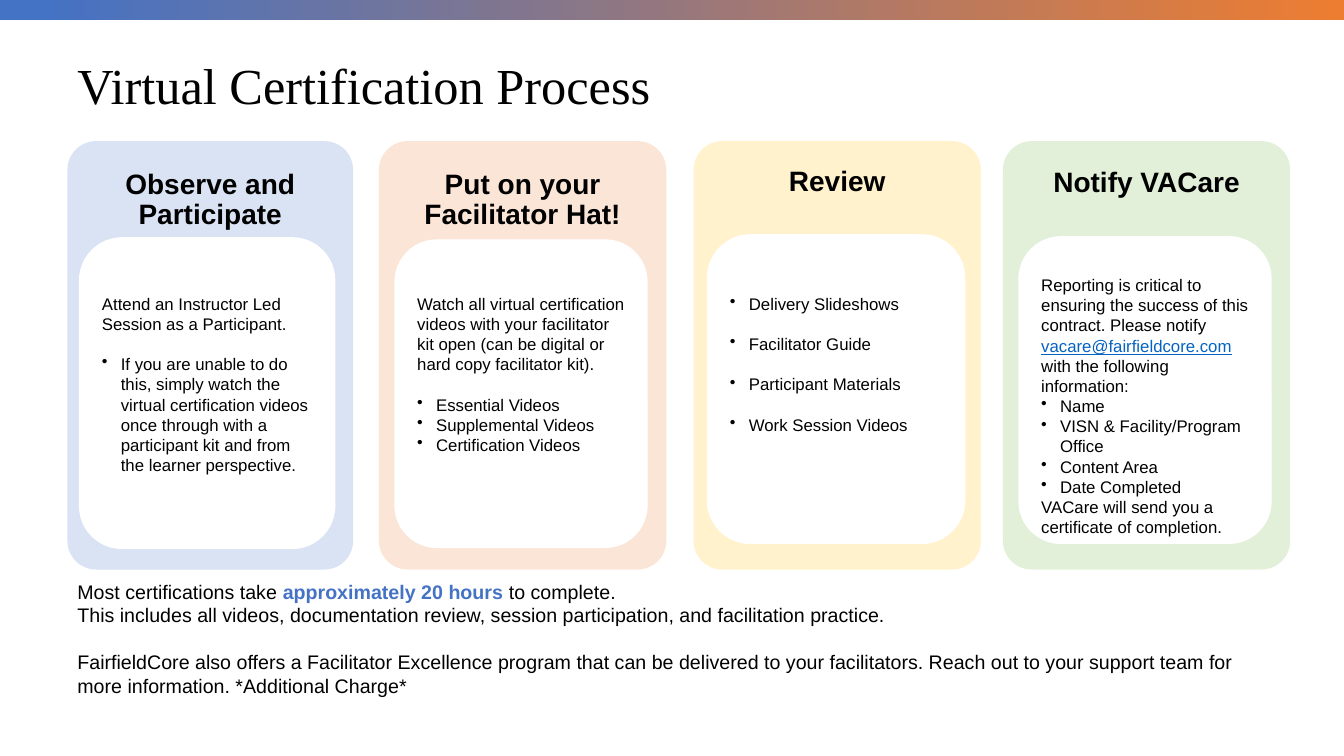
"""Build the Virtual Certification Process slide."""
from dataclasses import dataclass

from lxml import etree
from pptx import Presentation
from pptx import util as u
from pptx.dml.color import RGBColor
from pptx.enum import shapes, text
from pptx.oxml import ns

COLOURS = {
    "black": "000000", "white": "FFFFFF", "accent": "4472C4", "orange": "ED7D31",
    "link": "0563C1", "blue": "DAE3F3", "peach": "FBE5D6", "yellow": "FFF2CC",
    "green": "E2F0D9",
}
BLANK_LINE = 14.4
BULLET_INDENT = 13.5
PANEL_TOP, PANEL_HEIGHT = 100.8, 306


@dataclass(frozen=True)
class Box:
    left: float
    top: float
    width: float
    height: float

    def lengths(self) -> list:
        return [u.Pt(value) for value in (self.left, self.top, self.width, self.height)]


@dataclass(frozen=True)
class Run:
    words: str
    colour: str = "black"
    bold: bool | None = None
    underline: bool | None = None


@dataclass(frozen=True)
class Line:
    runs: tuple[Run, ...]
    bulleted: bool = False
    space_before: float = 0


@dataclass(frozen=True)
class Card:
    heading: str
    colour: str
    left: float
    width: float
    heading_top: float
    body: Box
    text_inset: float
    lines: tuple[Line, ...]


def plain(words: str, space_before: float = 0) -> Line:
    return Line((Run(words),), space_before=space_before)


def bullet(words: str, space_before: float = 0) -> Line:
    return Line((Run(words),), True, space_before)


CARDS = (
    Card("Observe and Participate", "blue", 48.2, 204, 113.8,
         Box(56.9, 169.9, 182.2, 221.8), 30.8, (
             plain("Attend an Instructor Led Session as a Participant."),
             bullet("If you are unable to do this, simply watch the virtual certification "
                    "videos once through with a participant kit and from the learner "
                    "perspective.", BLANK_LINE))),
    Card("Put on your Facilitator Hat!", "peach", 270.7, 205.2, 113.8,
         Box(282.2, 171.4, 180, 219.6), 29.5, (
             plain("Watch all virtual certification videos with your facilitator kit open "
                   "(can be digital or hard copy facilitator kit)."),
             bullet("Essential Videos", BLANK_LINE),
             bullet("Supplemental Videos"),
             bullet("Certification Videos"))),
    Card("Review", "yellow", 495.4, 205.2, 111.6,
         Box(505.4, 167.8, 183.6, 220.3), 32.8, (
             bullet("Delivery Slideshows"),
             bullet("Facilitator Guide", BLANK_LINE),
             bullet("Participant Materials", BLANK_LINE),
             bullet("Work Session Videos", BLANK_LINE))),
    Card("Notify VACare", "green", 716.4, 205.2, 112.3,
         Box(727.9, 169.2, 180, 218.9), 18.4, (
             Line((Run("Reporting is critical to ensuring the success of this contract. "
                       "Please notify "),
                   Run("vacare@fairfieldcore.com", "link", underline=True),
                   Run(" with the following information:"))),
             bullet("Name"),
             bullet("VISN & Facility/Program Office"),
             bullet("Content Area"),
             bullet("Date Completed"),
             plain("VACare will send you a certificate of completion."))),
)

FOOTER = (
    Line((Run("Most certifications take "),
          Run("approximately 20 hours", "accent", bold=True),
          Run(" to complete."))),
    plain("This includes all videos, documentation review, session participation, "
          "and facilitation practice."),
    plain("FairfieldCore also offers a Facilitator Excellence program that can be delivered "
          "to your facilitators. Reach out to your support team for more information. "
          "*Additional Charge*", 16.8),
)


def rgb(name: str) -> RGBColor:
    return RGBColor.from_string(COLOURS[name])


def add_bullet(paragraph) -> None:
    properties = paragraph._p.get_or_add_pPr()
    properties.set("marL", str(u.Pt(BULLET_INDENT)))
    properties.set("indent", str(-u.Pt(BULLET_INDENT)))
    mark = etree.Element(ns.qn("a:buChar"), char="•")
    properties.insert_element_before(mark, "a:tabLst", "a:defRPr", "a:extLst")


def write_lines(frame, lines: tuple[Line, ...], size: float) -> None:
    frame.word_wrap = True
    for index, line in enumerate(lines):
        paragraph = frame.paragraphs[0] if index == 0 else frame.add_paragraph()
        paragraph.alignment = text.PP_ALIGN.LEFT
        paragraph.space_before = u.Pt(line.space_before)
        paragraph.font.size = u.Pt(size)
        paragraph.font.name = "Arial"
        if line.bulleted:
            add_bullet(paragraph)
        for item in line.runs:
            run = paragraph.add_run()
            run.text = item.words
            run.font.color.rgb = rgb(item.colour)
            run.font.bold = item.bold
            run.font.underline = item.underline


def add_label(slide, box: Box, words: str, font: str, size: float, bold: bool = False):
    frame = slide.shapes.add_textbox(*box.lengths()).text_frame
    frame.word_wrap = True
    paragraph = frame.paragraphs[0]
    paragraph.text = words
    paragraph.line_spacing = 0.9
    paragraph.font.name = font
    paragraph.font.size = u.Pt(size)
    paragraph.font.bold = bold
    paragraph.font.color.rgb = rgb("black")
    return frame


def add_rounded(slide, box: Box, colour: str):
    shape = slide.shapes.add_shape(shapes.MSO_SHAPE.ROUNDED_RECTANGLE, *box.lengths())
    shape.shadow.inherit = False
    shape.fill.solid()
    shape.fill.fore_color.rgb = rgb(colour)
    return shape


def add_card(slide, card: Card) -> None:
    panel = add_rounded(slide, Box(card.left, PANEL_TOP, card.width, PANEL_HEIGHT), card.colour)
    panel.adjustments[0] = 0.1
    panel.line.fill.background()

    heading = add_label(slide, Box(card.left, card.heading_top, card.width, 56),
                        card.heading, "Arial", 20, bold=True)
    heading.margin_left = heading.margin_right = u.Pt(8)
    heading.margin_top = heading.margin_bottom = u.Pt(8)
    heading.paragraphs[0].alignment = text.PP_ALIGN.CENTER

    body = add_rounded(slide, card.body, "white")
    body.line.color.rgb = rgb("white")
    body.line.width = u.Pt(1)
    body.text_frame.vertical_anchor = text.MSO_ANCHOR.TOP
    body.text_frame.margin_top = u.Pt(card.text_inset)
    write_lines(body.text_frame, card.lines, 12)


def add_top_band(slide) -> None:
    band = slide.shapes.add_shape(shapes.MSO_SHAPE.RECTANGLE, *Box(0, 0, 960, 14.4).lengths())
    band.shadow.inherit = False
    band.line.fill.background()
    band.fill.gradient()
    band.fill.gradient_angle = 0
    for stop, position, colour in zip(band.fill.gradient_stops, (0.03, 1), ("accent", "orange")):
        stop.position = position
        stop.color.rgb = rgb(colour)


def main() -> None:
    presentation = Presentation()
    presentation.slide_width, presentation.slide_height = u.Pt(960), u.Pt(540)
    slide = presentation.slides.add_slide(presentation.slide_layouts[6])
    add_top_band(slide)
    title = add_label(slide, Box(48.2, 43.2, 864, 39.6), "Virtual Certification Process",
                      "Times New Roman", 36)
    title.vertical_anchor = text.MSO_ANCHOR.MIDDLE
    for card in CARDS:
        add_card(slide, card)
    footer = slide.shapes.add_textbox(*Box(48.2, 410.4, 872.6, 92.2).lengths())
    write_lines(footer.text_frame, FOOTER, 14)
    presentation.save("out.pptx")


if __name__ == "__main__":
    main()
